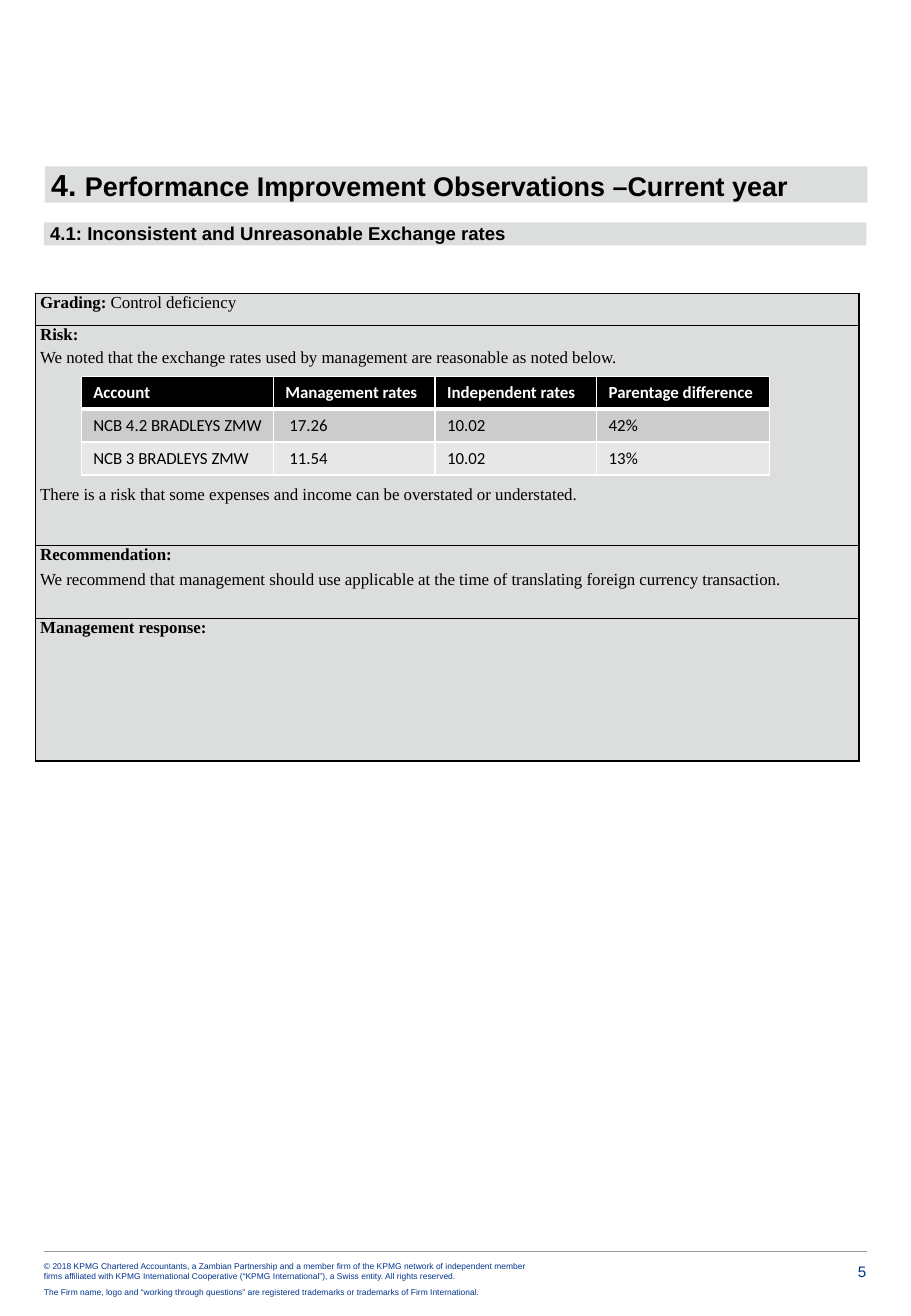
from lxml.etree import SubElement
from pptx import Presentation
from pptx.dml.color import RGBColor
from pptx.enum.shapes import MSO_CONNECTOR as CONNECTOR, MSO_SHAPE as SHAPE
from pptx.enum.text import MSO_ANCHOR as ANCHOR, PP_ALIGN as ALIGN
from pptx.oxml.ns import qn
from pptx.util import Cm, Pt

BLACK, WHITE, GREY, NAVY = "000000", "FFFFFF", "DCDDDD", "00338D"
SERIF = "Times New Roman"

HEADINGS = [
    (0.94, 3.48, 0.76, [("4. ", 18), ("Performance Improvement Observations –Current year", 16)]),
    (0.92, 4.65, 0.48, [("4.1: Inconsistent and Unreasonable Exchange rates", 11)]),
]
FOOTERS = [
    (0.89, 26.37, 10.46, 0.74, 5, [
        "© 2018 KPMG Chartered Accountants, a Zambian Partnership and a member firm of the KPMG "
        "network of independent member firms affiliated with KPMG International Cooperative "
        "(“KPMG International”), a Swiss entity. All rights reserved.",
        "The Firm name, logo and “working through questions” are registered trademarks or "
        "trademarks of Firm International.",
    ]),
    (17.91, 26.39, 0.25, 0.38, 9, ["5"]),
]
OBSERVATION = [
    (0.68, ALIGN.LEFT, [("Grading: ", "Control deficiency", 1, 0)]),
    (4.6, ALIGN.LEFT, [
        ("Risk:", "", 1, 0),
        ("", "We noted that the exchange rates used by management are reasonable as noted below.", 1.24, 0),
        ("", "There is a risk that some expenses and income can be overstated or understated.", 1.24, 67.5),
    ]),
    (1.52, ALIGN.JUSTIFY, [
        ("Recommendation:", "", 1, 0),
        ("", "We recommend that management should use applicable at the time of translating "
             "foreign currency transaction.", 1.15, 2),
    ]),
    (2.98, ALIGN.LEFT, [("Management response:", "", 1, 0)]),
]
RATES = [
    ("Account", "Management rates", "Independent rates", "Parentage difference"),
    ("NCB 4.2 BRADLEYS ZMW", "17.26", "10.02", "42%"),
    ("NCB 3 BRADLEYS ZMW", "11.54", "10.02", "13%"),
]
RATE_WIDTHS = [4.02, 3.38, 3.38, 3.61]
RATE_ROW_HEIGHT = 0.68
RATE_FILLS = [BLACK, "CCCCCC", "E7E7E7"]


def rgb(value):
    return RGBColor.from_string(value)


def set_font(font, name, size, color=BLACK, bold=False):
    font.name, font.size, font.bold = name, Pt(size), bold
    font.color.rgb = rgb(color)


def set_margins(target, left, right=0, top=0, bottom=0):
    target.margin_left, target.margin_right = Cm(left), Cm(right)
    target.margin_top, target.margin_bottom = Cm(top), Cm(bottom)


def get_paragraph(frame, index):
    return frame.add_paragraph() if index else frame.paragraphs[0]


def add_heading(slide, left, top, height, parts):
    shape = slide.shapes.add_shape(SHAPE.RECTANGLE, Cm(left), Cm(top), Cm(17.2), Cm(height))
    shape.shadow.inherit = False
    shape.fill.solid()
    shape.fill.fore_color.rgb = rgb(GREY)
    shape.line.fill.background()
    frame = shape.text_frame
    frame.word_wrap = True
    frame.vertical_anchor = ANCHOR.TOP
    set_margins(frame, 0.13)
    paragraph = frame.paragraphs[0]
    paragraph.alignment = ALIGN.LEFT
    for text, size in parts:
        run = paragraph.add_run()
        run.text = text
        set_font(run.font, "Arial", size, bold=True)


def add_footer(slide, left, top, width, height, size, lines):
    frame = slide.shapes.add_textbox(Cm(left), Cm(top), Cm(width), Cm(height)).text_frame
    frame.word_wrap = True
    set_margins(frame, 0.03)
    for index, line in enumerate(lines):
        paragraph = get_paragraph(frame, index)
        paragraph.text = line
        set_font(paragraph.font, "Arial", size, NAVY)
        if index:
            paragraph.space_before = Pt(3)


def add_footer_rule(slide):
    rule = slide.shapes.add_connector(CONNECTOR.STRAIGHT, Cm(0.92), Cm(26.16), Cm(18.12), Cm(26.16))
    rule.line.color.rgb = rgb("96979A")
    rule.line.width = Pt(0.25)
    SubElement(rule._element.spPr, qn("a:effectLst"))


def style_cell(cell, fill, border, bottom_width=1):
    properties = cell._tc.get_or_add_tcPr()
    for side, width in (("L", 1), ("R", 1), ("T", 1), ("B", bottom_width)):
        line = SubElement(properties, qn(f"a:ln{side}"), w=str(Pt(width)))
        SubElement(SubElement(line, qn("a:solidFill")), qn("a:srgbClr"), val=border)
    cell.fill.solid()
    cell.fill.fore_color.rgb = rgb(fill)


def add_plain_table(slide, left, top, widths, heights):
    table = slide.shapes.add_table(len(heights), len(widths), Cm(left), Cm(top),
                                   Cm(sum(widths)), Cm(sum(heights))).table
    table.first_row = table.horz_banding = False
    for column, width in zip(table.columns, widths):
        column.width = Cm(width)
    for row, height in zip(table.rows, heights):
        row.height = Cm(height)
    return table


def add_observation(slide):
    table = add_plain_table(slide, 0.74, 6.13, [17.22], [row[0] for row in OBSERVATION])
    for row, (_, alignment, paragraphs) in enumerate(OBSERVATION):
        cell = table.cell(row, 0)
        style_cell(cell, GREY, BLACK)
        set_margins(cell, 0.1)
        for index, (label, body, spacing, before) in enumerate(paragraphs):
            paragraph = get_paragraph(cell.text_frame, index)
            paragraph.alignment = alignment
            paragraph.line_spacing = spacing
            if before:
                paragraph.space_before = Pt(before)
            for text, bold in ((label, True), (body, False)):
                if text:
                    run = paragraph.add_run()
                    run.text = text
                    set_font(run.font, SERIF, 10, bold=bold)


def add_rates(slide):
    table = add_plain_table(slide, 1.7, 7.87, RATE_WIDTHS, [RATE_ROW_HEIGHT] * len(RATES))
    for row, values in enumerate(RATES):
        header = row == 0
        for column, value in enumerate(values):
            cell = table.cell(row, column)
            style_cell(cell, RATE_FILLS[row], WHITE, 3 if header else 1)
            left = 0.33 if column == 1 and not header else 0.25
            set_margins(cell, left, 0.25, 0.13, 0.13)
            paragraph = cell.text_frame.paragraphs[0]
            paragraph.text = value
            set_font(paragraph.font, "Calibri", 10, WHITE if header else BLACK, header)


def main():
    presentation = Presentation()
    presentation.slide_width, presentation.slide_height = Cm(19.05), Cm(27.51)
    slide = presentation.slides.add_slide(presentation.slide_layouts[6])
    add_footer_rule(slide)
    for heading in HEADINGS:
        add_heading(slide, *heading)
    for footer in FOOTERS:
        add_footer(slide, *footer)
    add_observation(slide)
    add_rates(slide)
    presentation.save("out.pptx")


if __name__ == "__main__":
    main()
